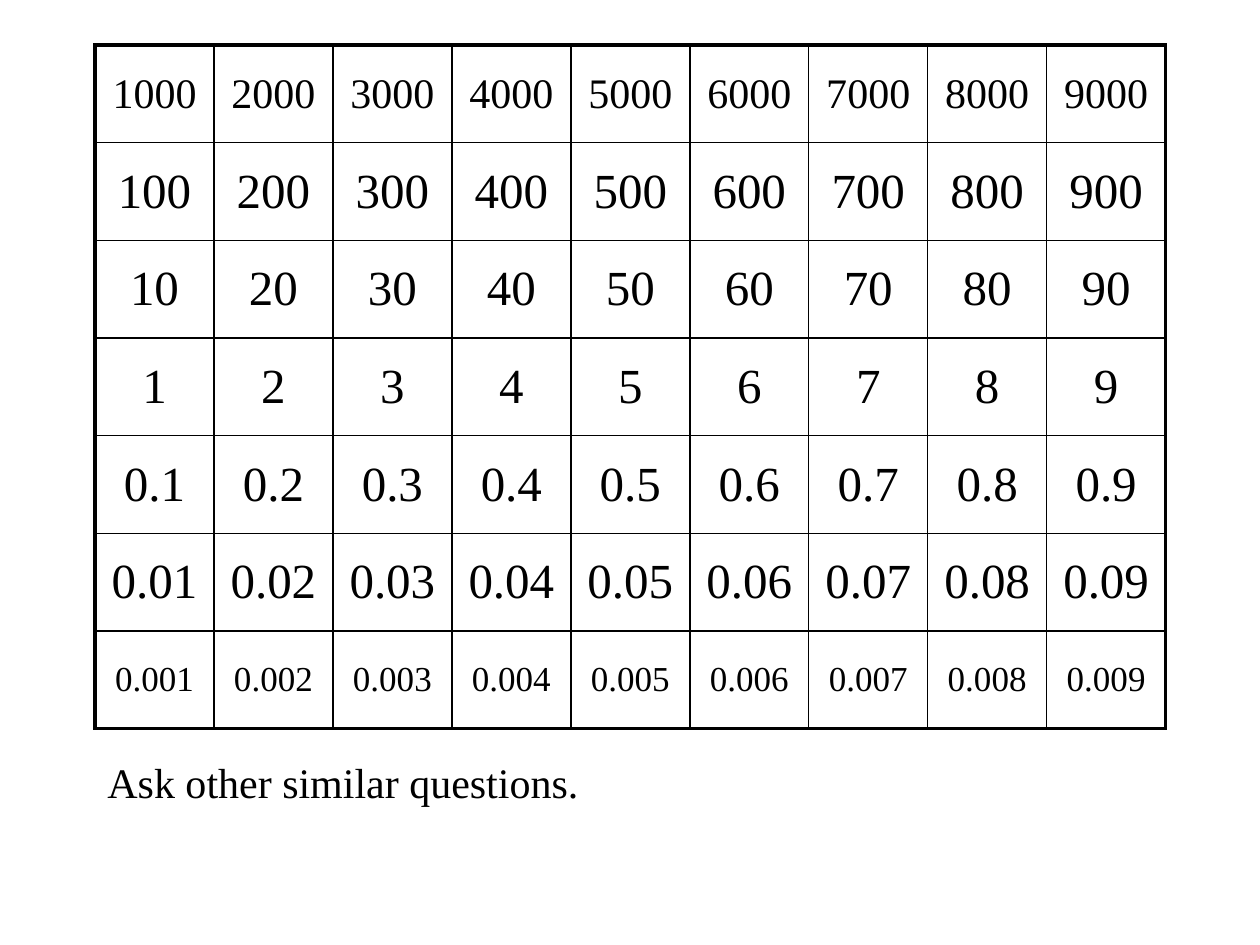
from dataclasses import dataclass

from lxml import etree
from pptx import Presentation
from pptx import util as u
from pptx.dml.color import RGBColor
from pptx.enum import text
from pptx.oxml import ns

PX = u.Inches(1) // 126


@dataclass(frozen=True)
class Theme:
    font: str = "Times New Roman"
    ink: str = "000000"
    large: int = 28
    medium: int = 24
    small: int = 20
    frame: float = 2.25
    grid: float = 1


class SlideBuilder:
    def __init__(self, slide, theme):
        self.slide = slide
        self.theme = theme

    def set_text(self, frame, wording, size, alignment):
        paragraph = frame.paragraphs[0]
        paragraph.text = wording
        paragraph.alignment = alignment
        paragraph.font.name = self.theme.font
        paragraph.font.size = u.Pt(size)
        paragraph.font.color.rgb = RGBColor.from_string(self.theme.ink)

    def border(self, cell, side, width):
        properties = cell._tc.get_or_add_tcPr()
        line = etree.SubElement(properties, ns.qn(f"a:ln{side}"), w=str(u.Pt(width)))
        fill = etree.SubElement(line, ns.qn("a:solidFill"))
        etree.SubElement(fill, ns.qn("a:srgbClr"), val=self.theme.ink)

    def number_table(self, left, top, width, height, rows, sizes):
        last_row, last_column = len(rows) - 1, len(rows[0]) - 1
        table = self.slide.shapes.add_table(
            len(rows), len(rows[0]), left * PX, top * PX, width * PX, height * PX).table
        table.first_row = table.horz_banding = False
        for row, (numbers, size) in enumerate(zip(rows, sizes)):
            for column, number in enumerate(numbers):
                cell = table.cell(row, column)
                cell.vertical_anchor = text.MSO_ANCHOR.MIDDLE
                self.set_text(cell.text_frame, number, size, text.PP_ALIGN.CENTER)
                # Heavy outer frame, thin inner grid
                outer_sides = {"L": column == 0, "R": column == last_column,
                               "T": row == 0, "B": row == last_row}
                for side, outer in outer_sides.items():
                    self.border(cell, side, self.theme.frame if outer else self.theme.grid)
                cell.fill.background()

    def caption(self, left, top, width, height, wording):
        box = self.slide.shapes.add_textbox(left * PX, top * PX, width * PX, height * PX)
        box.text_frame.word_wrap = True
        self.set_text(box.text_frame, wording, self.theme.medium, text.PP_ALIGN.LEFT)


def main():
    presentation = Presentation()
    presentation.slide_width, presentation.slide_height = u.Inches(10), u.Inches(7.5)
    theme = Theme()
    builder = SlideBuilder(
        presentation.slides.add_slide(presentation.slide_layouts[6]), theme)

    # Place value chart: one row per power of ten
    rows = [[f"{digit * 10 ** power:g}" for digit in range(1, 10)]
            for power in range(3, -4, -1)]
    sizes = [theme.medium] + [theme.large] * 5 + [theme.small]
    builder.number_table(95, 45, 1071, 684, rows, sizes)

    # Prompt below the chart
    builder.caption(95, 750, 1071, 63, "Ask other similar questions.")

    presentation.save("out.pptx")


if __name__ == "__main__":
    main()
